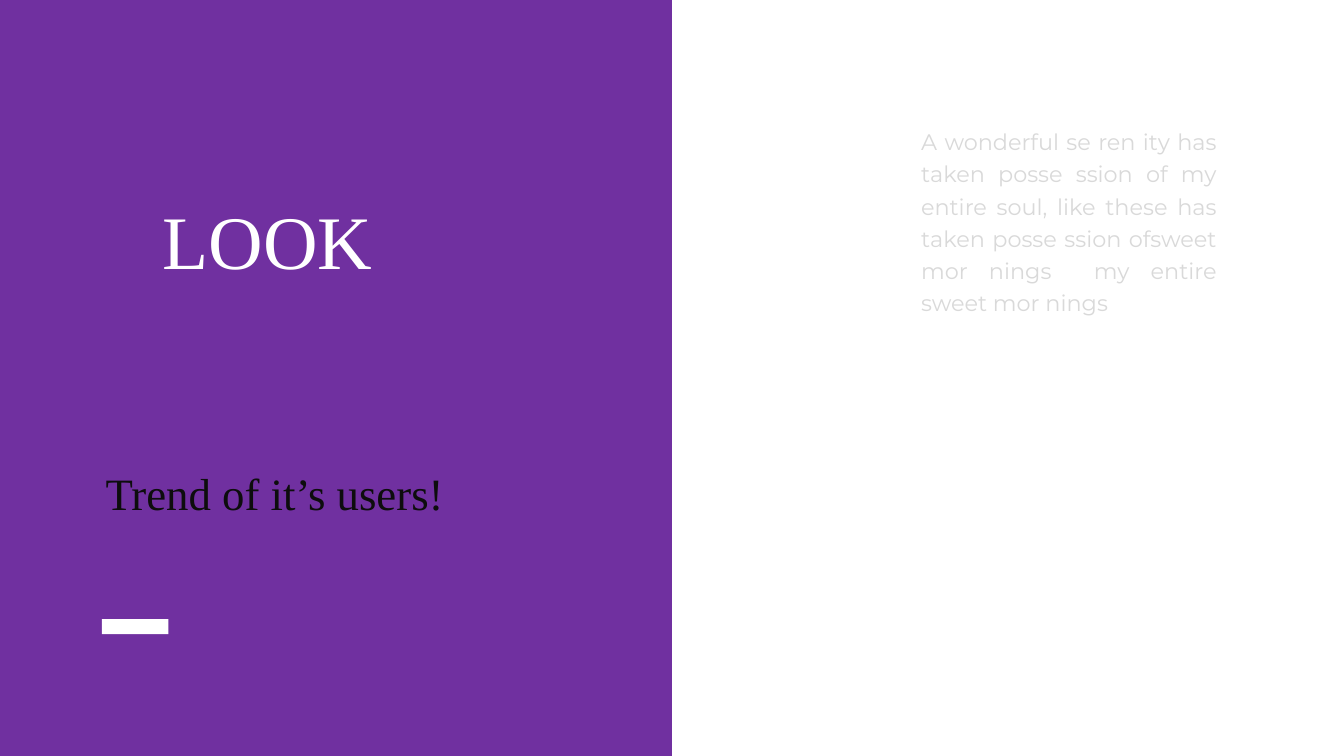
from pptx import Presentation
from pptx.dml.color import RGBColor
from pptx.enum import shapes, text
from pptx.util import Pt

SERIF = "Times New Roman"
WHITE = "FFFFFF"
BODY = ("A wonderful se ren ity has taken posse ssion of my entire soul, "
        "like these has taken posse ssion ofsweet mor nings  my entire "
        "sweet mor nings ")


def rgb(value):
    return RGBColor.from_string(value)


def add_block(s, left, top, width, height, color):
    sp = s.shapes.add_shape(shapes.MSO_SHAPE.RECTANGLE,
                            Pt(left), Pt(top), Pt(width), Pt(height))
    sp.shadow.inherit = False
    sp.fill.solid()
    sp.fill.fore_color.rgb = rgb(color)
    sp.line.fill.background()
    return sp


def set_text(sp, content, *, size, color, font=SERIF, spacing=1.5,
             align=text.PP_ALIGN.LEFT):
    tf = sp.text_frame
    tf.word_wrap = True
    tf.auto_size = text.MSO_AUTO_SIZE.SHAPE_TO_FIT_TEXT
    tf.vertical_anchor = text.MSO_ANCHOR.TOP
    p = tf.paragraphs[0]
    p.alignment = align
    p.line_spacing = spacing
    r = p.add_run()
    r.text = content
    r.font.size = Pt(size)
    r.font.name = font
    r.font.color.rgb = rgb(color)


def add_text(s, left, top, width, height, content, **fmt):
    sp = s.shapes.add_textbox(Pt(left), Pt(top), Pt(width), Pt(height))
    set_text(sp, content, **fmt)


def place_title(s, left, top, width, height, content, **fmt):
    sp = s.shapes.title
    sp.left, sp.top, sp.width, sp.height = map(Pt, (left, top, width, height))
    set_text(sp, content, **fmt)


def send_to_back(s, sp):
    s.shapes.title._element.addprevious(sp._element)


def main():
    prs = Presentation()
    prs.slide_width, prs.slide_height = Pt(960), Pt(540)
    s = prs.slides.add_slide(prs.slide_layouts.get_by_name("Title Only"))

    panel = add_block(s, 0, 0, 480, 540, "7030A0")
    send_to_back(s, panel)
    place_title(s, 95, 102.2, 192.2, 93.6, "LOOK", size=54, color=WHITE,
                align=text.PP_ALIGN.CENTER)
    add_text(s, 68.4, 309.6, 266.4, 58.3, "Trend of it’s users!",
             size=32, color="0D0D0D")
    add_block(s, 72.8, 442.2, 47.5, 10.8, WHITE)
    add_text(s, 650.9, 84.2, 225.4, 144.7, BODY, size=16, color="D9D9D9",
             font="Montserrat", spacing=1.2, align=text.PP_ALIGN.JUSTIFY)

    prs.save("out.pptx")


if __name__ == "__main__":
    main()
